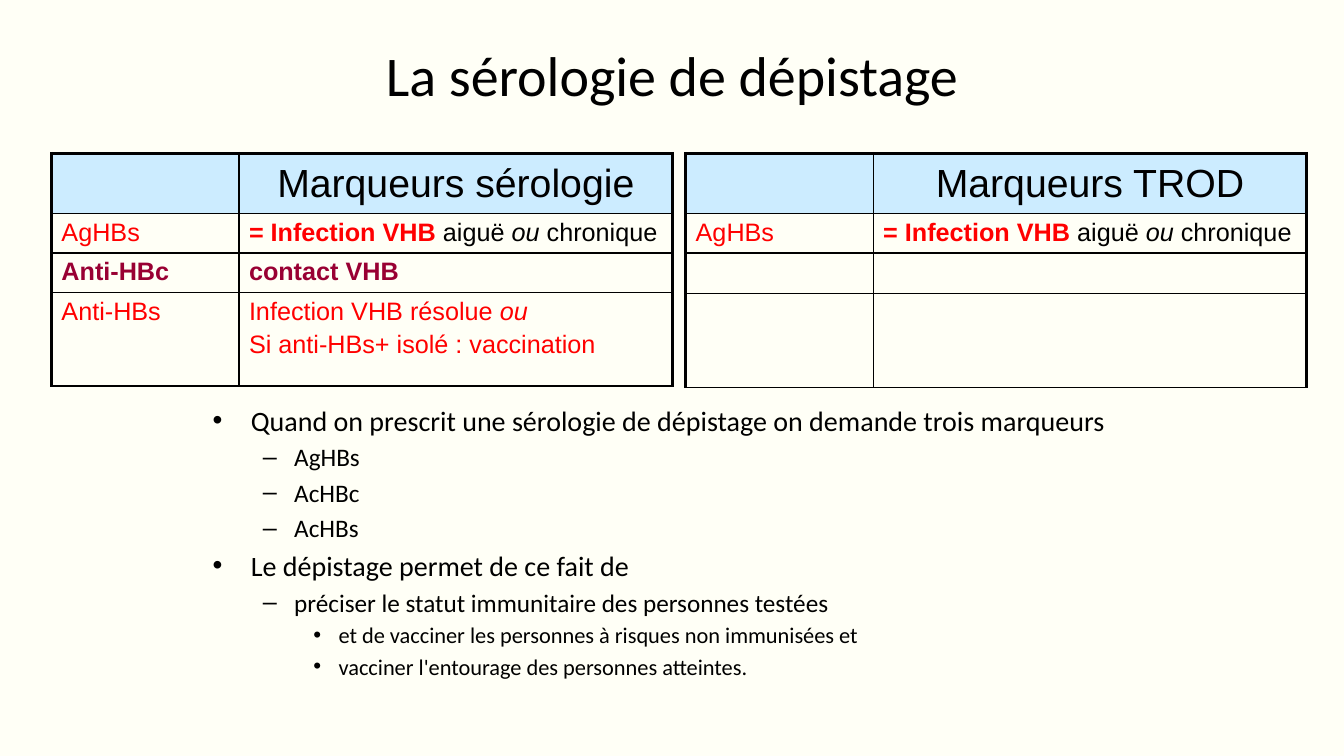
from dataclasses import dataclass

from lxml import etree
from pptx import Presentation
from pptx.dml.color import RGBColor
from pptx.enum.text import MSO_ANCHOR, PP_ALIGN
from pptx.oxml.ns import qn
from pptx.util import Inches, Pt

CENTER = PP_ALIGN.CENTER
LEFT = PP_ALIGN.LEFT
MIDDLE = MSO_ANCHOR.MIDDLE
TOP = MSO_ANCHOR.TOP

COLORS = {
    "background": "FFFFF6",
    "header": "CCECFF",
    "text": "000000",
    "alert": "FF0000",
    "contact": "990033",
}
SLIDE_WIDTH, SLIDE_HEIGHT = Inches(13.33), Inches(7.5)
TABLE_LEFT, TABLE_TOP, TABLE_PITCH = Inches(0.51), Inches(1.52), Inches(6.29)
COLUMN_WIDTHS = [Inches(1.86), Inches(4.3)]
ROW_HEIGHTS = [Inches(0.6), Inches(0.39), Inches(0.39), Inches(0.93)]
THIN, THICK = Pt(1), Pt(2.25)
SPACE_SHARE = 0.2


@dataclass(frozen=True)
class Piece:
    text: str
    color: str = "alert"
    bold: bool = False
    italic: bool = False


@dataclass(frozen=True)
class BulletLevel:
    symbol: str
    size: int
    margin: float
    hanging: float


@dataclass(frozen=True)
class Bullet:
    level: int
    text: str


Line = list[Piece]
Cell = list[Line]


@dataclass(frozen=True)
class MarkerTable:
    header: str
    rows: list[tuple[Cell, Cell]]


HBS_ANTIGEN = (
    [[Piece("AgHBs")]],
    [[
        Piece("= Infection VHB", bold=True),
        Piece(" aiguë ", "text"),
        Piece("ou", "text", italic=True),
        Piece(" chronique", "text"),
    ]],
)
TABLES = [
    MarkerTable("Marqueurs sérologie", [
        HBS_ANTIGEN,
        ([[Piece("Anti-HBc", "contact", bold=True)]],
         [[Piece("contact VHB", "contact", bold=True)]]),
        ([[Piece("Anti-HBs")]],
         [[Piece("Infection VHB résolue "), Piece("ou", italic=True)],
          [Piece("Si anti-HBs+ isolé : vaccination")]]),
    ]),
    MarkerTable("Marqueurs TROD", [HBS_ANTIGEN, ([], []), ([], [])]),
]
LEVELS = [
    BulletLevel("•", 20, 0.38, 0.38),
    BulletLevel("–", 18, 0.81, 0.31),
    BulletLevel("•", 16, 1.25, 0.25),
]
BULLETS = [
    Bullet(0, "Quand on prescrit une sérologie de dépistage on demande trois marqueurs"),
    Bullet(1, "AgHBs"),
    Bullet(1, "AcHBc"),
    Bullet(1, "AcHBs"),
    Bullet(0, "Le dépistage permet de ce fait de"),
    Bullet(1, "préciser le statut immunitaire des personnes testées"),
    Bullet(2, "et de vacciner les personnes à risques non immunisées et"),
    Bullet(2, "vacciner l'entourage des personnes atteintes."),
]


def rgb(name: str) -> RGBColor:
    return RGBColor.from_string(COLORS[name])


def format_paragraph(paragraph, size: int, font_name: str) -> None:
    paragraph.space_before = Pt(SPACE_SHARE * size)
    paragraph.font.size = Pt(size)
    paragraph.font.name = font_name
    paragraph.font.color.rgb = rgb("text")


def set_borders(cell, widths: dict[str, int]) -> None:
    properties = cell._tc.get_or_add_tcPr()
    for side, width in widths.items():
        line = etree.SubElement(properties, qn(f"a:ln{side}"), w=str(width))
        fill = etree.SubElement(line, qn("a:solidFill"))
        etree.SubElement(fill, qn("a:srgbClr"), val=COLORS["text"])


def write_cell(cell, lines: Cell, size: int, alignment) -> None:
    for index, pieces in enumerate(lines):
        frame = cell.text_frame
        paragraph = frame.add_paragraph() if index else frame.paragraphs[0]
        paragraph.alignment = alignment
        format_paragraph(paragraph, size, "Arial")
        for piece in pieces:
            run = paragraph.add_run()
            run.text = piece.text
            run.font.color.rgb = rgb(piece.color)
            run.font.bold = piece.bold
            run.font.italic = piece.italic


def add_marker_table(slide, content: MarkerTable, left: int) -> None:
    rows = [([], [[Piece(content.header, "text")]]), *content.rows]
    table = slide.shapes.add_table(
        len(rows), len(COLUMN_WIDTHS), left, TABLE_TOP,
        sum(COLUMN_WIDTHS), sum(ROW_HEIGHTS),
    ).table
    table.first_row = table.horz_banding = False
    for column, width in zip(table.columns, COLUMN_WIDTHS):
        column.width = width
    for row_index, (row, height) in enumerate(zip(rows, ROW_HEIGHTS)):
        table.rows[row_index].height = height
        is_header = row_index == 0
        for column_index, lines in enumerate(row):
            cell = table.cell(row_index, column_index)
            set_borders(cell, {
                "L": THIN if column_index else THICK,
                "R": THICK if column_index else THIN,
                "T": THICK if is_header else THIN,
                "B": THIN,
            })
            if is_header:
                cell.fill.solid()
                cell.fill.fore_color.rgb = rgb("header")
            else:
                cell.fill.background()
            cell.vertical_anchor = MIDDLE if is_header else TOP
            write_cell(cell, lines, 28 if is_header else 18,
                       CENTER if is_header else LEFT)


def add_bullets(slide) -> None:
    box = slide.shapes.add_textbox(Inches(2.01), Inches(3.95), Inches(11.13), Inches(3.32))
    frame = box.text_frame
    frame.word_wrap = True
    for index, bullet in enumerate(BULLETS):
        level = LEVELS[bullet.level]
        paragraph = frame.add_paragraph() if index else frame.paragraphs[0]
        paragraph.text = bullet.text
        paragraph.level = bullet.level
        properties = paragraph._p.get_or_add_pPr()
        properties.set("marL", str(Inches(level.margin)))
        properties.set("indent", str(-Inches(level.hanging)))
        etree.SubElement(properties, qn("a:buFont"), typeface="Arial")
        etree.SubElement(properties, qn("a:buChar"), char=level.symbol)
        format_paragraph(paragraph, level.size, "Calibri")


def add_title(slide) -> None:
    title = slide.shapes.title
    title.left, title.top = Inches(2.33), Inches(0.31)
    title.width, title.height = Inches(8.67), Inches(0.86)
    title.text_frame.text = "La sérologie de dépistage"
    title.text_frame.vertical_anchor = MIDDLE
    paragraph = title.text_frame.paragraphs[0]
    paragraph.alignment = CENTER
    paragraph.font.size = Pt(40)
    paragraph.font.name = "Calibri"
    paragraph.font.color.rgb = rgb("text")


def main() -> None:
    presentation = Presentation()
    presentation.slide_width, presentation.slide_height = SLIDE_WIDTH, SLIDE_HEIGHT
    slide = presentation.slides.add_slide(presentation.slide_layouts[5])
    slide.background.fill.solid()
    slide.background.fill.fore_color.rgb = rgb("background")
    add_title(slide)
    for index, content in enumerate(TABLES):
        add_marker_table(slide, content, TABLE_LEFT + index * TABLE_PITCH)
    add_bullets(slide)
    presentation.save("out.pptx")


if __name__ == "__main__":
    main()
